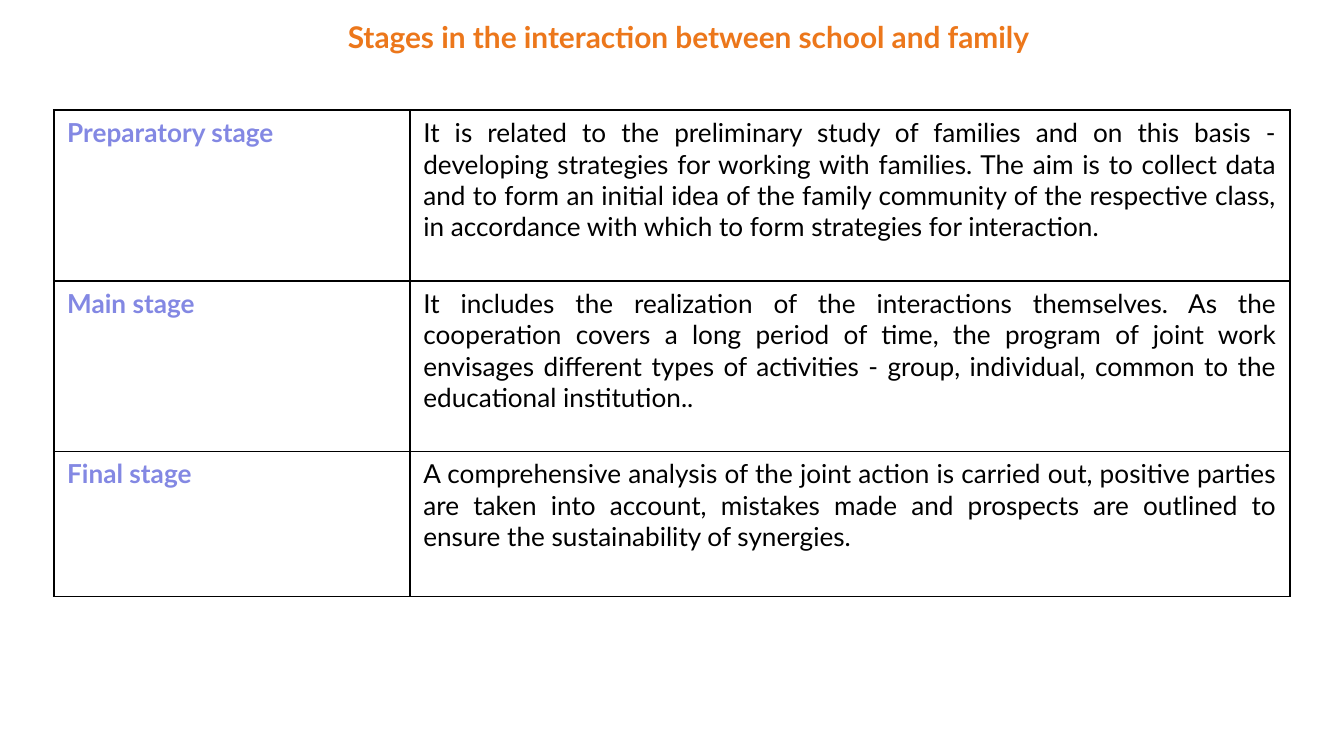
import lxml.etree
import pptx
import pptx.dml.color
import pptx.enum.text
import pptx.oxml.ns
import pptx.util

TITLE = "Stages in the interaction between school and family"
STAGES = [
    ("Preparatory stage", "It is related to the preliminary study of families and on this basis - developing strategies for working with families. The aim is to collect data and to form an initial idea of the family community of the respective class, in accordance with which to form strategies for interaction."),
    ("Main stage", "It includes the realization of the interactions themselves. As the cooperation covers a long period of time, the program of joint work envisages different types of activities - group, individual, common to the educational institution.."),
    ("Final stage", "A comprehensive analysis of the joint action is carried out, positive parties are taken into account, mistakes made and prospects are outlined to ensure the sustainability of synergies."),
]

ALIGN = pptx.enum.text.PP_ALIGN
THEME = {
    "title": {"font": {"name": "Lato", "size": pptx.util.Pt(16), "bold": True}, "color": "EC771B", "align": ALIGN.CENTER},
    "stage": {"font": {"name": "Lato", "size": pptx.util.Pt(14), "bold": True}, "color": "8388E3", "align": ALIGN.LEFT},
    "description": {"font": {"name": "Lato", "size": pptx.util.Pt(14), "bold": False}, "color": "000000", "align": ALIGN.JUSTIFY},
    "cell_fill": "FFFFFF",
    "border": "000000",
    "border_width": pptx.util.Pt(1),
}
SLIDE_WIDTH = 10
SLIDE_HEIGHT = SLIDE_WIDTH * 9 / 16
TITLE_BOX = (0, 0.07, SLIDE_WIDTH, 0.4)
TITLE_FRAME = {
    "margin_left": pptx.util.Inches(0.35),
    "margin_right": pptx.util.Inches(0.1),
    "margin_top": pptx.util.Inches(0.05),
    "margin_bottom": pptx.util.Inches(0.05),
    "vertical_anchor": pptx.enum.text.MSO_ANCHOR.MIDDLE,
    "auto_size": pptx.enum.text.MSO_AUTO_SIZE.NONE,
    "word_wrap": True,
}
TABLE_ORIGIN = (0.4, 0.82)
COLUMN_WIDTHS = (2.65, 6.55)
ROW_HEIGHTS = (1.27, 1.27, 1.08)


def set_attributes(target, values):
    for name, value in values.items():
        setattr(target, name, value)


def write_text(text_frame, text, style):
    text_frame.text = text
    paragraph = text_frame.paragraphs[0]
    paragraph.alignment = style["align"]
    set_attributes(paragraph.font, style["font"])
    paragraph.font.color.rgb = pptx.dml.color.RGBColor.from_string(style["color"])


def add_borders(cell):
    qualify = pptx.oxml.ns.qn
    properties = cell._tc.get_or_add_tcPr()
    for position, side in enumerate(("a:lnL", "a:lnR", "a:lnT", "a:lnB")):
        line = lxml.etree.Element(qualify(side), w=str(THEME["border_width"]))
        fill = lxml.etree.SubElement(line, qualify("a:solidFill"))
        lxml.etree.SubElement(fill, qualify("a:srgbClr"), val=THEME["border"])
        properties.insert(position, line)


def add_title(slide):
    title = slide.shapes.title
    title.left, title.top, title.width, title.height = map(pptx.util.Inches, TITLE_BOX)
    set_attributes(title.text_frame, TITLE_FRAME)
    write_text(title.text_frame, TITLE, THEME["title"])


def add_stage_table(slide):
    box = (*TABLE_ORIGIN, sum(COLUMN_WIDTHS), sum(ROW_HEIGHTS))
    table = slide.shapes.add_table(len(STAGES), len(COLUMN_WIDTHS), *map(pptx.util.Inches, box)).table
    set_attributes(table, {"first_row": False, "horz_banding": False})
    for column, width in zip(table.columns, COLUMN_WIDTHS):
        column.width = pptx.util.Inches(width)
    for row, height, texts in zip(table.rows, ROW_HEIGHTS, STAGES):
        row.height = pptx.util.Inches(height)
        for cell, text, style in zip(row.cells, texts, ("stage", "description")):
            write_text(cell.text_frame, text, THEME[style])
            cell.fill.solid()
            cell.fill.fore_color.rgb = pptx.dml.color.RGBColor.from_string(THEME["cell_fill"])
            add_borders(cell)


def main():
    presentation = pptx.Presentation()
    presentation.slide_width = pptx.util.Inches(SLIDE_WIDTH)
    presentation.slide_height = pptx.util.Inches(SLIDE_HEIGHT)
    slide = presentation.slides.add_slide(presentation.slide_layouts.get_by_name("Title Only"))
    add_title(slide)
    add_stage_table(slide)
    presentation.save("out.pptx")


if __name__ == "__main__":
    main()
